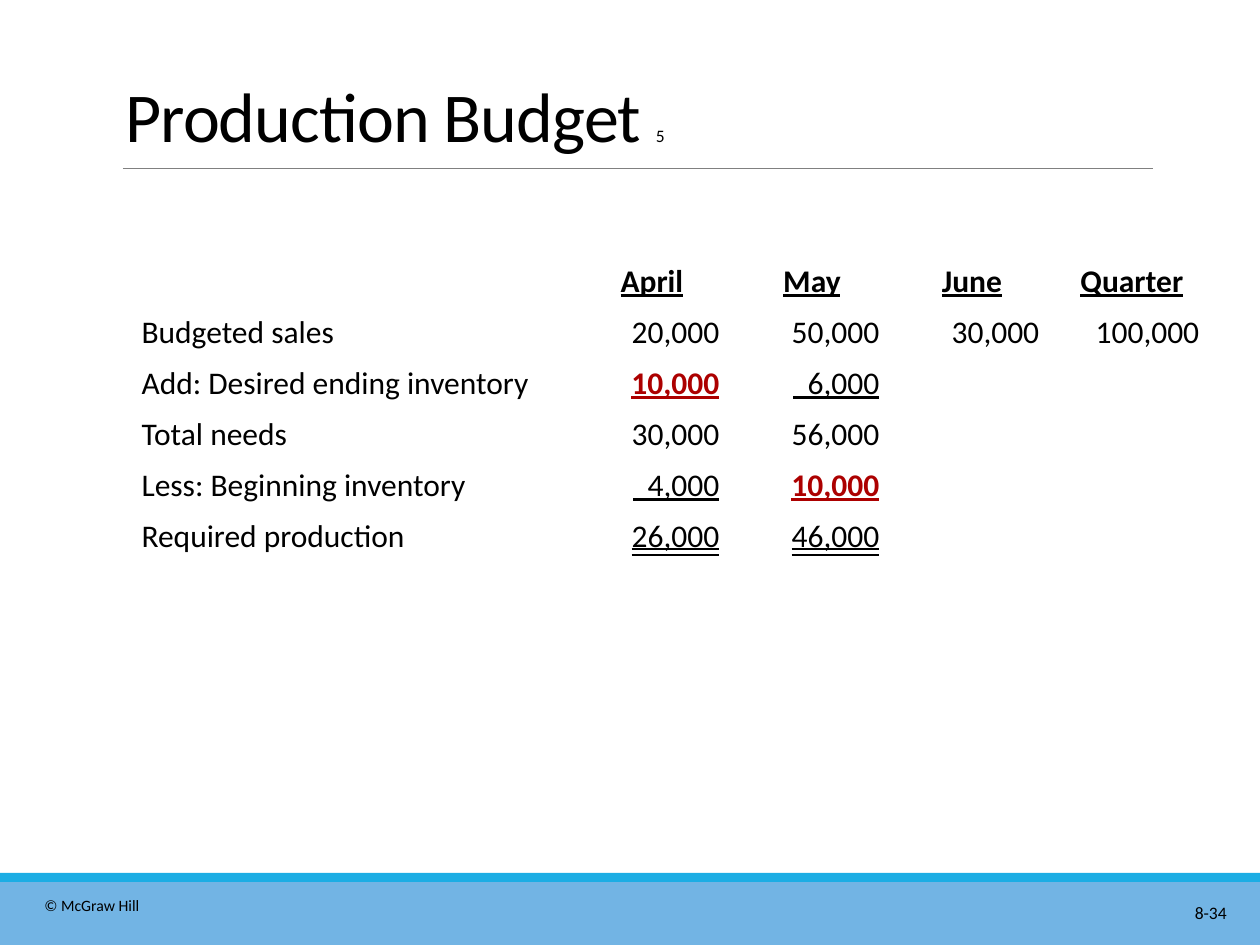
from lxml import etree
from pptx import Presentation, util as u
from pptx.dml.color import RGBColor
from pptx.enum import shapes, text
from pptx.oxml.ns import qn

PX = u.Inches(1) // 126
FONT = "Calibri"
BLACK, RED = "000000", "AC0000"
LEFT, CENTER, RIGHT = text.PP_ALIGN.LEFT, text.PP_ALIGN.CENTER, text.PP_ALIGN.RIGHT

PLAIN = {}
HEADING = {"bold": True, "underline": True}
SUBTRACTED = {"underline": True}
CARRIED = {"bold": True, "underline": True, "color": RED}
RESULT = {"underline": text.MSO_UNDERLINE.DOUBLE_LINE}

MONTHS = ["April", "May", "June", "Quarter"]
BUDGET = [
    ("Budgeted sales", [("20,000", PLAIN), ("50,000", PLAIN),
                        ("30,000", PLAIN), ("100,000", PLAIN)]),
    ("Add: Desired ending inventory", [("10,000", CARRIED), ("  6,000", SUBTRACTED)]),
    ("Total needs", [("30,000", PLAIN), ("56,000", PLAIN)]),
    ("Less: Beginning inventory", [("  4,000", SUBTRACTED), ("10,000", CARRIED)]),
    ("Required production", [("26,000", RESULT), ("46,000", RESULT)]),
]
BANDS = [((0, 882, 1260, 63), "72B4E4"), ((0, 873, 1260, 9), "1CADE4")]
FOOTERS = [("8-34", (1071, 896, 168, 34), 10, RIGHT),
           ("© McGraw Hill", (32, 890, 147, 31), 9, LEFT)]
TITLE = [("Production Budget ", 40), ("5", 10)]
TITLE_BOX = (113, 21, 1040, 142)
RULE = (123, 168, 1153, 168)
TABLE_LEFT, TABLE_TOP = 129, 256
LABEL_WIDTH, MONTH_WIDTH, ROW_HEIGHT = 443, 160, 51


def px(*lengths):
    return [length * PX for length in lengths]


def rgb(color):
    return RGBColor.from_string(color)


def add_run(paragraph, words, size, color=BLACK, bold=False, underline=False):
    run = paragraph.add_run()
    run.text = words
    font = run.font
    font.name, font.size = FONT, u.Pt(size)
    font.bold, font.underline = bold, underline
    font.color.rgb = rgb(color)
    return run


def add_box(slide, box):
    frame = slide.shapes.add_textbox(*px(*box)).text_frame
    frame.word_wrap = True
    return frame


def add_bands_and_rule(slide):
    for box, color in BANDS:
        band = slide.shapes.add_shape(shapes.MSO_SHAPE.RECTANGLE, *px(*box))
        band.shadow.inherit = False
        band.fill.solid()
        band.fill.fore_color.rgb = rgb(color)
        band.line.fill.background()
    rule = slide.shapes.add_connector(shapes.MSO_CONNECTOR.STRAIGHT, *px(*RULE))
    rule.line.color.rgb = rgb("808080")
    rule.line.width = u.Pt(0.5)
    etree.SubElement(rule._element.spPr, qn("a:effectLst"))


def add_title(slide):
    frame = add_box(slide, TITLE_BOX)
    frame.vertical_anchor = text.MSO_ANCHOR.BOTTOM
    paragraph = frame.paragraphs[0]
    paragraph.line_spacing = 0.85
    for words, size in TITLE:
        run = add_run(paragraph, words, size)
        run._r.get_or_add_rPr().set("spc", "-50")


def add_footers(slide):
    for words, box, size, align in FOOTERS:
        paragraph = add_box(slide, box).paragraphs[0]
        paragraph.alignment = align
        add_run(paragraph, words, size)


def fill_cell(cell, words, align, style):
    paragraph = cell.text_frame.paragraphs[0]
    paragraph.alignment = align
    add_run(paragraph, words, 18, **style)


def add_budget(slide):
    rows, columns = len(BUDGET) + 1, len(MONTHS) + 1
    width = LABEL_WIDTH + MONTH_WIDTH * len(MONTHS)
    table = slide.shapes.add_table(
        rows, columns, *px(TABLE_LEFT, TABLE_TOP, width, ROW_HEIGHT * rows)).table
    table.first_row = table.horz_banding = False
    for index, column in enumerate(table.columns):
        column.width = (MONTH_WIDTH if index else LABEL_WIDTH) * PX
    for cell in table.iter_cells():
        cell.fill.background()
    for column, month in enumerate(MONTHS, 1):
        fill_cell(table.cell(0, column), month, CENTER, HEADING)
    for row, (label, amounts) in enumerate(BUDGET, 1):
        fill_cell(table.cell(row, 0), label, LEFT, PLAIN)
        for column, (amount, style) in enumerate(amounts, 1):
            fill_cell(table.cell(row, column), amount, RIGHT, style)


def main():
    deck = Presentation()
    deck.slide_width, deck.slide_height = px(1260, 945)
    slide = deck.slides.add_slide(deck.slide_layouts[6])
    add_bands_and_rule(slide)
    add_footers(slide)
    add_title(slide)
    add_budget(slide)
    deck.save("out.pptx")


if __name__ == "__main__":
    main()
